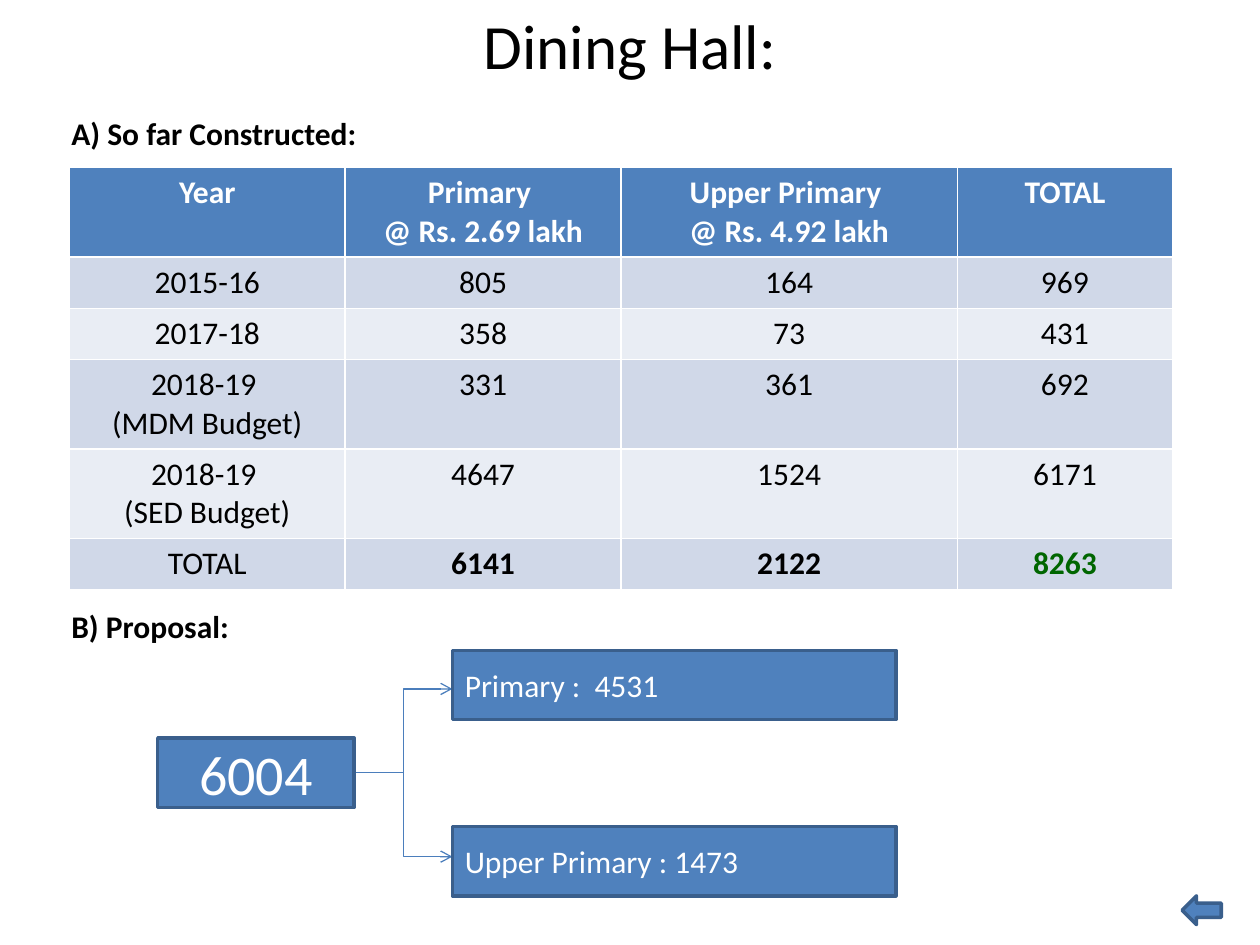
"""Build the Dining Hall slide with a construction table and a proposal breakdown."""
from dataclasses import dataclass

from lxml.etree import SubElement
from pptx import Presentation
from pptx.dml.color import RGBColor
from pptx.enum.shapes import MSO_CONNECTOR as Connector, MSO_SHAPE as Preset
from pptx.enum.text import MSO_ANCHOR as Anchor, PP_ALIGN as Align
from pptx.oxml.ns import qn
from pptx.slide import Slide
from pptx.text.text import TextFrame
from pptx.util import Cm, Pt

FONT = "Calibri"
COLORS = {
    "text": "000000",
    "light": "FFFFFF",
    "fill": "4F81BD",
    "outline": "3A5F8C",
    "connector": "4B7EBC",
    "odd_row": "D0D8E8",
    "even_row": "E9EDF4",
    "grand_total": "006600",
}
COLUMN_WIDTHS = (5.56, 5.56, 6.78, 4.34)
SINGLE_ROW, DOUBLE_ROW = 1.03, 1.8
ROWS = (
    ("Year", "Primary \n@ Rs. 2.69 lakh", "Upper Primary \n@ Rs. 4.92 lakh", "TOTAL"),
    ("2015-16", "805", "164", "969"),
    ("2017-18", "358", "73", "431"),
    ("2018-19 \n(MDM Budget)", "331", "361", "692"),
    ("2018-19 \n(SED Budget)", "4647", "1524", "6171"),
    ("TOTAL", "6141", "2122", "8263"),
)


@dataclass(frozen=True)
class Heading:
    text: str
    top: float


@dataclass(frozen=True)
class Box:
    left: float
    top: float
    width: float
    height: float
    text: str = ""
    size: int = 18
    align: Align = Align.LEFT
    preset: Preset = Preset.RECTANGLE


HEADINGS = (Heading("A) So far Constructed:", 2.18), Heading("B) Proposal:", 12.12))
BOXES = (
    Box(3.18, 14.88, 3.96, 1.4, "6004", 32, Align.CENTER),
    Box(9.12, 13.11, 8.94, 1.4, "Primary :  4531"),
    Box(9.12, 16.66, 8.94, 1.4, "Upper Primary : 1473"),
    Box(23.83, 18.06, 0.79, 0.58, preset=Preset.LEFT_ARROW),
)
BRANCH_START = (7.14, 15.58)
BRANCH_ENDS = ((9.12, 13.89), (9.12, 17.27))


def color(name: str) -> RGBColor:
    """Return a named colour."""
    return RGBColor.from_string(COLORS[name])


def write(frame: TextFrame, text: str, size: int, color_name: str,
          align: Align = Align.LEFT, bold: bool = False) -> None:
    """Fill a text frame with uniformly formatted paragraphs."""
    frame.text = text
    for paragraph in frame.paragraphs:
        paragraph.alignment = align
        font = paragraph.font
        font.name, font.size, font.bold = FONT, Pt(size), bold
        font.color.rgb = color(color_name)


def add_title(slide: Slide, text: str) -> None:
    """Place the title across the top of the slide."""
    title = slide.shapes.title
    title.left, title.top, title.width, title.height = Cm(0), Cm(0), Cm(25.4), Cm(1.78)
    write(title.text_frame, text, 36, "text", Align.CENTER)
    title.text_frame.vertical_anchor = Anchor.MIDDLE


def add_construction_table(slide: Slide) -> None:
    """Draw the table of dining halls constructed each year."""
    heights = [DOUBLE_ROW if any("\n" in text for text in row) else SINGLE_ROW for row in ROWS]
    table = slide.shapes.add_table(
        len(ROWS), len(COLUMN_WIDTHS), Cm(1.4), Cm(3.38),
        Cm(sum(COLUMN_WIDTHS)), Cm(sum(heights))).table
    for column, width in zip(table.columns, COLUMN_WIDTHS):
        column.width = Cm(width)
    last_row, last_column = len(ROWS) - 1, len(COLUMN_WIDTHS) - 1
    for row_index, row in enumerate(ROWS):
        table.rows[row_index].height = Cm(heights[row_index])
        is_header = row_index == 0
        fill_name = "fill" if is_header else "odd_row" if row_index % 2 else "even_row"
        for column_index, text in enumerate(row):
            cell = table.cell(row_index, column_index)
            cell.fill.solid()
            cell.fill.fore_color.rgb = color(fill_name)
            text_color = "light" if is_header else "text"
            if (row_index, column_index) == (last_row, last_column):
                text_color = "grand_total"
            bold = is_header or (row_index == last_row and column_index > 0)
            write(cell.text_frame, text, 18, text_color, Align.CENTER, bold)


def add_heading(slide: Slide, heading: Heading) -> None:
    """Add a bold section heading."""
    text_box = slide.shapes.add_textbox(Cm(1.19), Cm(heading.top), Cm(8.74), Cm(1.02))
    text_box.text_frame.word_wrap = True
    write(text_box.text_frame, heading.text, 18, "text", bold=True)


def add_box(slide: Slide, box: Box) -> None:
    """Draw a filled and outlined shape with its text."""
    shape = slide.shapes.add_shape(
        box.preset, Cm(box.left), Cm(box.top), Cm(box.width), Cm(box.height))
    shape.shadow.inherit = False
    shape.fill.solid()
    shape.fill.fore_color.rgb = color("fill")
    shape.line.color.rgb = color("outline")
    shape.line.width = Pt(2)
    if box.text:
        write(shape.text_frame, box.text, box.size, "light", box.align)
        shape.text_frame.vertical_anchor = Anchor.MIDDLE


def add_branch(slide: Slide, end: tuple[float, float]) -> None:
    """Draw an elbow arrow from the proposal total to one of its parts."""
    connector = slide.shapes.add_connector(
        Connector.ELBOW, *(Cm(value) for value in BRANCH_START + end))
    connector.line.color.rgb = color("connector")
    connector.line.width = Pt(0.75)
    properties = connector.element.spPr
    SubElement(properties.find(qn("a:ln")), qn("a:tailEnd"), type="arrow")
    SubElement(properties, qn("a:effectLst"))


def main() -> None:
    """Assemble and save the slide."""
    presentation = Presentation()
    presentation.slide_width, presentation.slide_height = Cm(25.4), Cm(19.05)
    slide = presentation.slides.add_slide(presentation.slide_layouts.get_by_name("Title Only"))
    add_title(slide, "Dining Hall:")
    add_construction_table(slide)
    for heading in HEADINGS:
        add_heading(slide, heading)
    for end in BRANCH_ENDS:
        add_branch(slide, end)
    for box in BOXES:
        add_box(slide, box)
    presentation.save("out.pptx")


if __name__ == "__main__":
    main()
